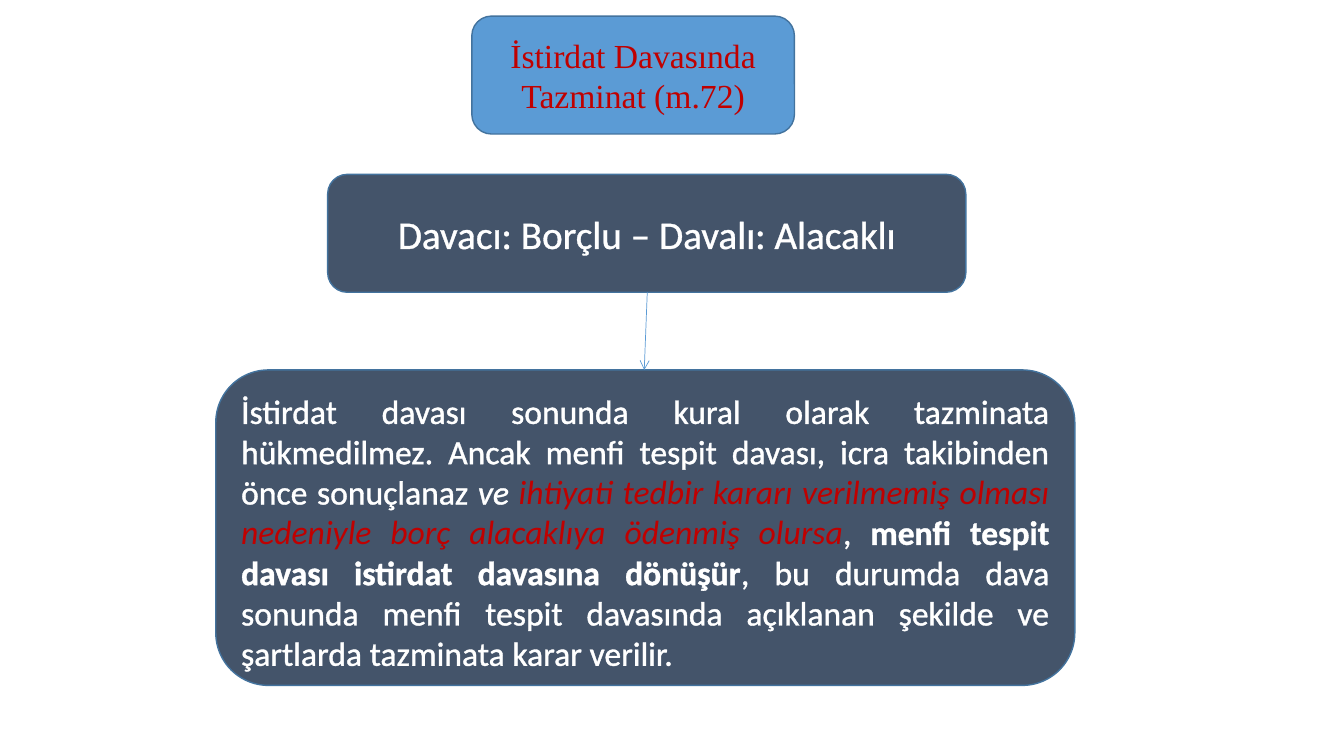
import pptx
import pptx.util
import pptx.dml.color
import pptx.enum.shapes
import pptx.enum.text
import pptx.oxml.ns
import lxml.etree

Inches = pptx.util.Inches
Pt = pptx.util.Pt
Shape = pptx.enum.shapes.MSO_SHAPE
Align = pptx.enum.text.PP_ALIGN
Anchor = pptx.enum.text.MSO_ANCHOR
qn = pptx.oxml.ns.qn

WHITE, RED = "FFFFFF", "C00000"
NAVY, BLUE, EDGE = "44546A", "5B9BD5", "43739E"


def color(code):
    return pptx.dml.color.RGBColor.from_string(code)


class Board:
    """Holds the shared style and the current slide."""

    def __init__(self, slide):
        self.slide = slide
        self.font = "Calibri"
        self.glow = 1.45

    def box(self, left, top, width, height, fill, anchor):
        shape = self.slide.shapes.add_shape(
            Shape.FLOWCHART_ALTERNATE_PROCESS,
            Inches(left), Inches(top), Inches(width), Inches(height))
        shape.shadow.inherit = False
        shape.fill.solid()
        shape.fill.fore_color.rgb = color(fill)
        shape.line.color.rgb = color(EDGE)
        shape.line.width = Pt(1)
        frame = shape.text_frame
        frame.word_wrap = True
        frame.vertical_anchor = anchor
        return shape

    def text(self, shape, align, parts, **base):
        par = shape.text_frame.paragraphs[0]
        par.alignment = align
        for words, extra in parts:
            run = par.add_run()
            run.text = words
            style = {"name": self.font, "color": WHITE, "bold": False,
                     "italic": False, **base, **extra}
            run.font.color.rgb = color(style.pop("color"))
            for key, value in style.items():
                setattr(run.font, key, value)
            self.outline(run)

    def outline(self, run):
        # White outline around the letters
        line = lxml.etree.Element(qn("a:ln"), w=str(int(Pt(self.glow))))
        fill = lxml.etree.SubElement(line, qn("a:solidFill"))
        lxml.etree.SubElement(fill, qn("a:srgbClr"), val=WHITE)
        run.font._element.insert(0, line)

    def arrow(self, x1, y1, x2, y2):
        link = self.slide.shapes.add_connector(
            pptx.enum.shapes.MSO_CONNECTOR.STRAIGHT,
            Inches(x1), Inches(y1), Inches(x2), Inches(y2))
        link.line.color.rgb = color(BLUE)
        link.line.width = Pt(0.5)
        lxml.etree.SubElement(link.line._get_or_add_ln(), qn("a:tailEnd"), type="arrow")
        lxml.etree.SubElement(link._element.spPr, qn("a:effectLst"))


def main():
    deck = pptx.Presentation()
    deck.slide_width, deck.slide_height = Inches(13.33), Inches(7.5)
    board = Board(deck.slides.add_slide(deck.slide_layouts[6]))

    # Parties
    sides = board.box(3.25, 1.73, 6.33, 1.17, NAVY, Anchor.MIDDLE)
    board.text(sides, Align.CENTER,
               [("Davacı: Borçlu – Davalı: Alacaklı", {})], size=Pt(28))

    # Rule on compensation
    rule = board.box(2.14, 3.67, 8.52, 3.13, NAVY, Anchor.TOP)
    board.text(rule, Align.JUSTIFY, [
        ("İstirdat davası sonunda kural olarak tazminata hükmedilmez. "
         "Ancak menfi tespit davası, icra takibinden önce sonuçlanaz ", {}),
        ("ve ", {"italic": True}),
        ("ihtiyati tedbir kararı verilmemiş olması nedeniyle borç "
         "alacaklıya ödenmiş olursa", {"italic": True, "color": RED}),
        (", ", {}),
        ("menfi tespit davası istirdat davasına dönüşür", {"bold": True}),
        (", bu durumda dava sonunda menfi tespit davasında açıklanan "
         "şekilde ve şartlarda tazminata karar verilir.", {}),
    ], size=Pt(24))

    # Title
    title = board.box(4.68, 0.16, 3.2, 1.17, BLUE, Anchor.MIDDLE)
    board.text(title, Align.CENTER, [("İstirdat Davasında Tazminat (m.72)", {})],
               size=Pt(24), name="Times New Roman", color=RED)

    # Link from parties to rule
    board.arrow(6.42, 2.9, 6.39, 3.67)

    deck.save("out.pptx")


if __name__ == "__main__":
    main()
